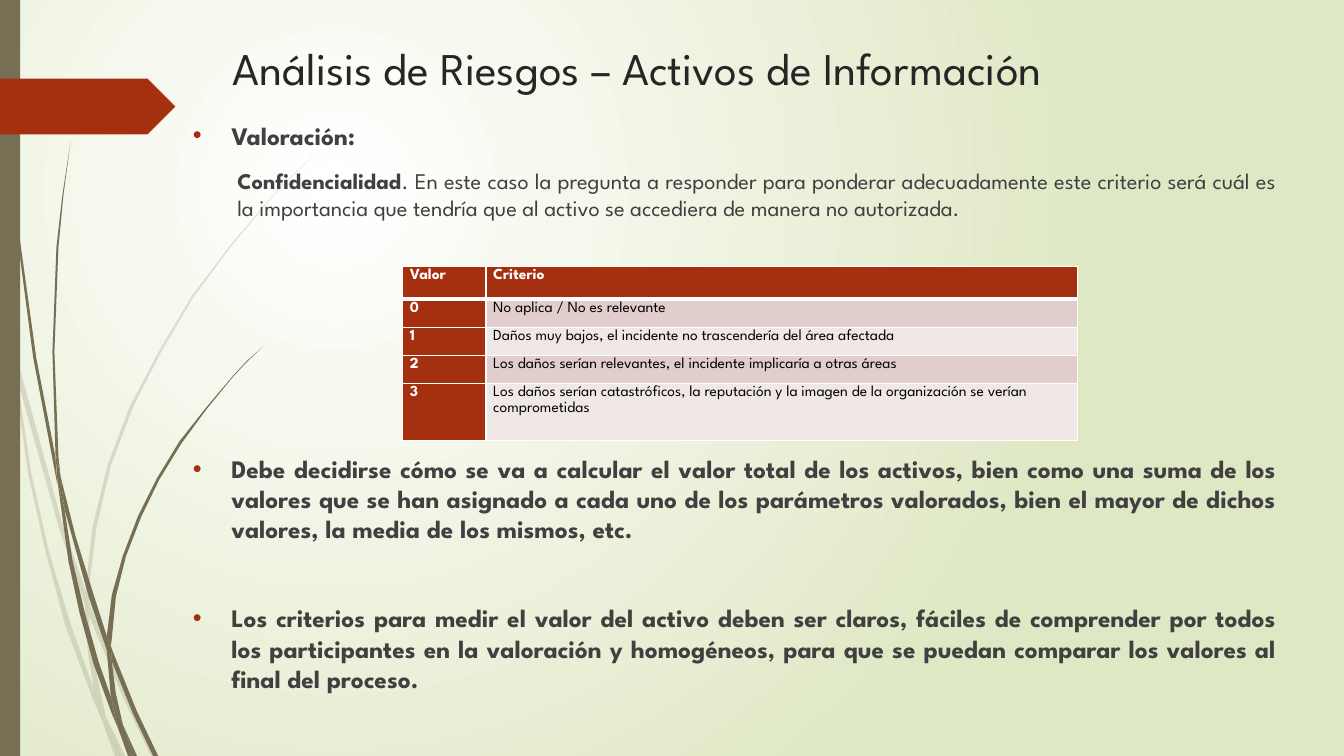
import dataclasses

import lxml.etree
import pptx
import pptx.dml.color
import pptx.enum.shapes
import pptx.enum.text
import pptx.oxml
import pptx.oxml.ns
import pptx.util

Cm = pptx.util.Cm
Pt = pptx.util.Pt
qn = pptx.oxml.ns.qn
rgb = pptx.dml.color.RGBColor.from_string


@dataclasses.dataclass(frozen=True)
class Theme:
    font: str = "League Spartan"
    title: str = "262626"
    text: str = "404040"
    accent: str = "A53010"
    olive: str = "766F54"
    glow: str = "FFFFFF"
    edge: str = "DFE8C4"
    cell_text: str = "000000"
    bands: tuple = ("F0E8E7", "E1CDCC")
    title_size: float = 32.4
    bullet_size: float = 18
    detail_size: float = 16
    table_size: float = 11


theme = Theme()


def paint(sp, color):
    sp.shadow.inherit = False
    sp.line.fill.background()
    sp.fill.solid()
    sp.fill.fore_color.rgb = rgb(color)


def style(font, size, color, bold=False):
    font.name = theme.font
    font.size = Pt(size)
    font.bold = bold
    font.color.rgb = rgb(color)


prs = pptx.Presentation()
prs.slide_width, prs.slide_height = Cm(33.87), Cm(19.05)
s = prs.slides.add_slide(prs.slide_layouts[5])

fill = s.background.fill
fill.gradient()
for stop, color in zip(fill.gradient_stops, (theme.glow, theme.edge)):
    stop.color.rgb = rgb(color)
grad = s.background._cSld.find(".//" + qn("a:gradFill"))
grad.remove(grad.find(qn("a:lin")))
radial = lxml.etree.SubElement(grad, qn("a:path"), path="circle")
lxml.etree.SubElement(radial, qn("a:fillToRect"), l="50000", t="50000", r="100000", b="100000")

faint_grass = [
    [(0.11, 3.5), (0.09, 3.22), (0, 2.82), (0, 2.99), (0.1, 3.44)],
    [(0.58, 5.22), (0.84, 5.99), (0.85, 5.86), (0.62, 5.2), (0.14, 3.45), (0.17, 3.76)],
    [(0.92, 6.07), (0.88, 5.96), (0.88, 6.1), (1.23, 6.94), (1.5, 7.5), (1.55, 7.5), (1.27, 6.92)],
    [(1.19, 7.5), (1.24, 7.5), (1.05, 7.11)],
    [(0.93, 6.83), (0.7, 6.19), (0.48, 5.45), (0.31, 4.69), (0.17, 3.76), (0.11, 3.5), (0.28, 4.7),
     (0.45, 5.46), (0.65, 6.21), (0.92, 6.93), (1.01, 7.14), (0.99, 7.07)],
    [(0.84, 5.99), (0.87, 6.46), (0.93, 6.83), (0.96, 6.92), (1.05, 7.11), (0.91, 6.46), (0.88, 6.08)],
    [(0.88, 5.84), (0.96, 5.22), (1.1, 4.62), (1.32, 4.04), (1.6, 3.49), (1.92, 2.95), (2.29, 2.45),
     (2.68, 1.98), (2.9, 1.75), (3.12, 1.53), (2.89, 1.75), (2.68, 1.97), (2.28, 2.44), (1.9, 2.94),
     (1.58, 3.48), (1.29, 4.03), (1.07, 4.61), (0.92, 5.22), (0.85, 5.84), (0.88, 5.96)],
    [(1.01, 7.14), (1.14, 7.5), (1.19, 7.5)],
    [(0.88, 6.08), (0.88, 5.96), (0.85, 5.86), (0.84, 5.99)],
    [(0.96, 6.92), (0.93, 6.83), (0.99, 7.07), (1.01, 7.14), (1.19, 7.5), (1.05, 7.11)],
]
solid_grass = [
    [(0.07, 1.1), (0.17, 2.33), (0.33, 3.55), (0.57, 4.81), (0.55, 4.53), (0.36, 3.55), (0.19, 2.32),
     (0.08, 1.09), (0.04, 0), (0.03, 0), (0.04, 0.48)],
    [(0.88, 5.92), (1.06, 6.45), (1.06, 6.31), (0.93, 5.9), (0.75, 5.32), (0.6, 4.72), (0.64, 5.05)],
    [(1.13, 6.49), (1.1, 6.41), (1.11, 6.56), (1.32, 7.08), (1.52, 7.5), (1.57, 7.5), (1.36, 7.06)],
    [(1.1, 6.91), (0.98, 6.57), (0.84, 6.07), (0.72, 5.56), (0.64, 5.05), (0.57, 4.77), (0.68, 5.57),
     (0.79, 6.08), (0.93, 6.59), (1.11, 7.08), (1.17, 7.22)],
    [(0.6, 4.72), (0.58, 4.53), (0.54, 3.49), (0.58, 2.45), (0.63, 1.93), (0.7, 1.41), (0.62, 1.93),
     (0.56, 2.45), (0.52, 3.49), (0.55, 4.49)],
    [(1.33, 7.5), (1.36, 7.5), (1.22, 7.19)],
    [(0.57, 4.77), (0.64, 5.05), (0.6, 4.72), (0.55, 4.49)],
    [(1.11, 6.33), (1.15, 5.92), (1.25, 5.52), (1.4, 5.13), (1.58, 4.76), (1.8, 4.4), (2.05, 4.06),
     (2.31, 3.74), (2.45, 3.59), (2.61, 3.44), (2.45, 3.58), (2.31, 3.73), (2.04, 4.05), (1.78, 4.38),
     (1.56, 4.74), (1.37, 5.12), (1.22, 5.51), (1.11, 5.9), (1.06, 6.31), (1.1, 6.41)],
    [(1.17, 7.22), (1.27, 7.5), (1.31, 7.5)],
    [(1.06, 6.45), (1.1, 6.91), (1.16, 7.06), (1.22, 7.19), (1.15, 6.88), (1.11, 6.56)],
    [(1.06, 6.45), (1.11, 6.56), (1.1, 6.41), (1.06, 6.31)],
    [(1.16, 7.06), (1.1, 6.91), (1.17, 7.22), (1.3, 7.5), (1.33, 7.5), (1.22, 7.19)],
]
for grass, opacity in ((faint_grass, 20), (solid_grass, 100)):
    for piece in grass:
        outline = [(Cm(2.54 * x), Cm(2.54 * y)) for x, y in piece]
        builder = s.shapes.build_freeform(*outline[0])
        builder.add_line_segments(outline[1:], close=True)
        sp = builder.convert_to_shape()
        paint(sp, theme.olive)
        if opacity < 100:
            color = sp._element.spPr.find(".//" + qn("a:srgbClr"))
            lxml.etree.SubElement(color, qn("a:alpha"), val=str(opacity * 1000))

MSO_SHAPE = pptx.enum.shapes.MSO_SHAPE
for kind, top, width, height, color in (
    (MSO_SHAPE.RECTANGLE, 0, 0.51, 19.05, theme.olive),
    (MSO_SHAPE.PENTAGON, 1.98, 4.42, 1.41, theme.accent),
):
    paint(s.shapes.add_shape(kind, 0, Cm(top), Cm(width), Cm(height)), color)

title = s.shapes.title
title.left, title.top, title.width, title.height = Cm(5.61), Cm(0.89), Cm(26.06), Cm(2.59)
tf = title.text_frame
tf.text = "Análisis de Riesgos – Activos de Información"
tf.vertical_anchor = pptx.enum.text.MSO_ANCHOR.TOP
tf.paragraphs[0].alignment = pptx.enum.text.PP_ALIGN.LEFT
style(tf.paragraphs[0].runs[0].font, theme.title_size, theme.title)

body = [
    (True, 0, [("Valoración:", True)]),
    (False, 12, [
        ("Confidencialidad", True),
        (". En este caso la pregunta a responder para ponderar adecuadamente este criterio será "
         "cuál es la importancia que tendría que al activo se accediera de manera no autorizada.", False)]),
    (True, 166, [
        ("Debe decidirse cómo se va a calcular el valor total de los activos, bien como una suma de "
         "los valores que se han asignado a cada uno de los parámetros valorados, bien el mayor de "
         "dichos valores, la media de los mismos, etc.", True)]),
    (True, 42, [
        ("Los criterios para medir el valor del activo deben ser claros, fáciles de comprender por "
         "todos los participantes en la valoración y homogéneos, para que se puedan comparar los "
         "valores al final del proceso.", True)]),
]
tf = s.shapes.add_textbox(Cm(4.61), Cm(2.9), Cm(27.81), Cm(15.82)).text_frame
tf.word_wrap = True
for i, (bulleted, space, runs) in enumerate(body):
    p = tf.paragraphs[0] if i == 0 else tf.add_paragraph()
    p.alignment = pptx.enum.text.PP_ALIGN.JUSTIFY
    p.space_before = Pt(space)
    pPr = p._p.get_or_add_pPr()
    pPr.set("marL", str(Cm(0.97 if bulleted else 1.12)))
    pPr.set("indent", str(Cm(-0.97 if bulleted else 0)))
    if bulleted:
        color = lxml.etree.SubElement(pPr, qn("a:buClr"))
        lxml.etree.SubElement(color, qn("a:srgbClr"), val=theme.accent)
        lxml.etree.SubElement(pPr, qn("a:buFont"), typeface="Arial")
        lxml.etree.SubElement(pPr, qn("a:buChar"), char="•")
    for text, bold in runs:
        r = p.add_run()
        r.text = text
        style(r.font, theme.bullet_size if bulleted else theme.detail_size, theme.text, bold)

criteria = [
    ("Valor", "Criterio"),
    ("0", "No aplica / No es relevante"),
    ("1", "Daños muy bajos, el incidente no trascendería del área afectada"),
    ("2", "Los daños serían relevantes, el incidente implicaría a otras áreas"),
    ("3", "Los daños serían catastróficos, la reputación y la imagen de la organización se verían "
          "comprometidas"),
]
table = s.shapes.add_table(5, 2, Cm(10.15), Cm(6.71), Cm(17), Cm(4.38)).table
for column, width in zip(table.columns, (2.1, 14.9)):
    column.width = Cm(width)
for row, height in zip(table.rows, (0.83, 0.71, 0.71, 0.71, 1.42)):
    row.height = Cm(height)
for i, values in enumerate(criteria):
    for j, value in enumerate(values):
        cell = table.cell(i, j)
        heading = i == 0 or j == 0
        cell.margin_left = cell.margin_right = Cm(0.18)
        cell.margin_top = cell.margin_bottom = 0
        tcPr = cell._tc.get_or_add_tcPr()
        for side in ("L", "R", "T", "B"):
            thick = (i, side) in ((0, "B"), (1, "T"))
            ln = lxml.etree.SubElement(tcPr, qn("a:ln" + side), w=str(Pt(3 if thick else 1)))
            line_fill = lxml.etree.SubElement(ln, qn("a:solidFill"))
            lxml.etree.SubElement(line_fill, qn("a:srgbClr"), val=theme.glow)
        cell.fill.solid()
        cell.fill.fore_color.rgb = rgb(theme.accent if heading else theme.bands[i % 2])
        cell.text_frame.text = value
        p = cell.text_frame.paragraphs[0]
        p.line_spacing = 1.15
        style(p.runs[0].font, theme.table_size, theme.glow if heading else theme.cell_text, heading)

prs.save("out.pptx")
